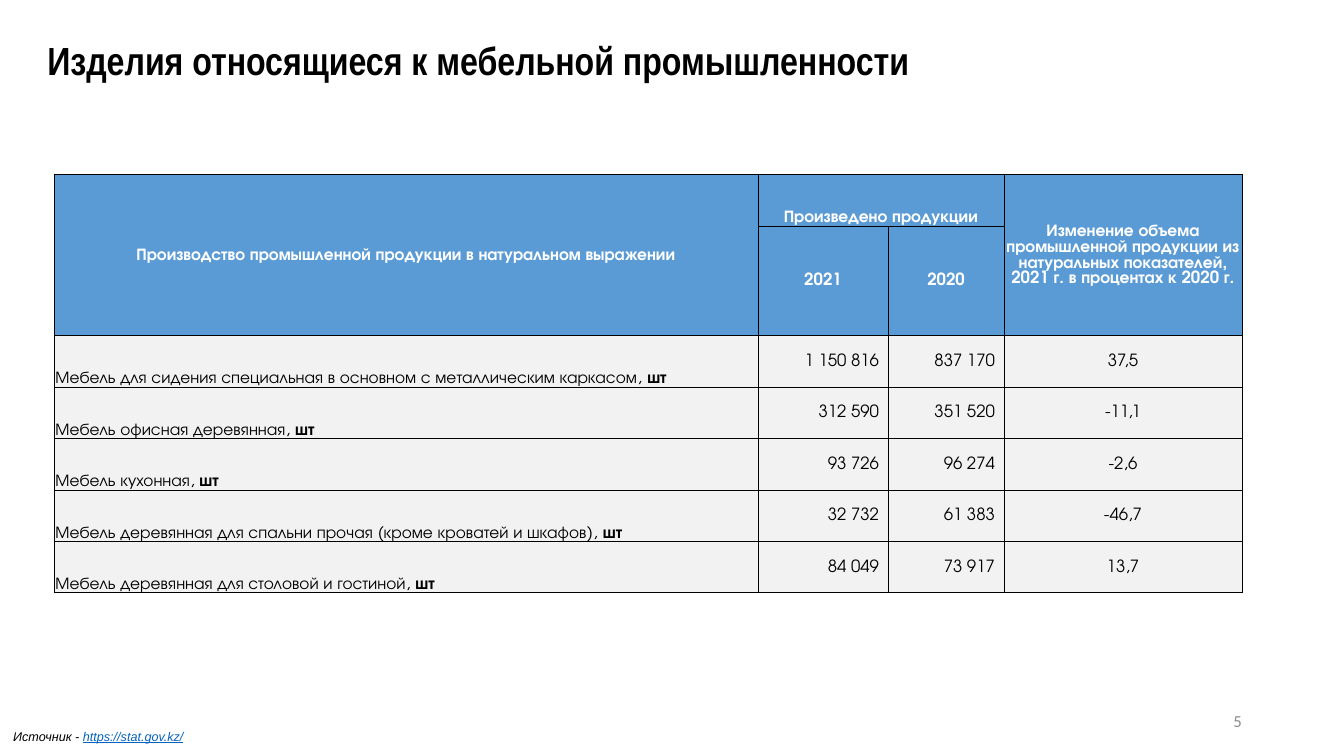
import pptx
import pptx.util
import pptx.dml.color
import pptx.enum.text
from lxml import etree
from pptx.oxml.ns import qn

Pt = pptx.util.Pt
Align = pptx.enum.text.PP_ALIGN
Anchor = pptx.enum.text.MSO_ANCHOR

BLACK, WHITE, GREY = "000000", "FFFFFF", "8C8C8C"
HEAD, BODY, LINK = "5B9BD5", "F2F2F2", "0563C1"
FACE = "TeX Gyre Adventor"

WIDTHS = (502.5, 93, 82.8, 170)
ROW, TALL = 36.72, 78.5
GOODS = (
    ("Мебель для сидения специальная в основном с металлическим каркасом, ",
     "1 150 816", "837 170", "37,5"),
    ("Мебель офисная деревянная, ", "312 590", "351 520", "-11,1"),
    ("Мебель кухонная, ", "93 726", "96 274", "-2,6"),
    ("Мебель деревянная для спальни прочая (кроме кроватей и шкафов), ",
     "32 732", "61 383", "-46,7"),
    ("Мебель деревянная для столовой и гостиной, ", "84 049", "73 917", "13,7"),
)
# Row, column, rows spanned, columns spanned, anchor, text
HEADS = (
    (0, 0, 2, 1, Anchor.MIDDLE,
     "Производство промышленной продукции в натуральном выражении"),
    (0, 1, 1, 2, Anchor.BOTTOM, "Произведено продукции"),
    (0, 3, 2, 1, Anchor.MIDDLE,
     "Изменение объема промышленной продукции из натуральных показателей, "
     "2021 г. в процентах к 2020 г."),
    (1, 1, 1, 1, Anchor.MIDDLE, "2021"),
    (1, 2, 1, 1, Anchor.MIDDLE, "2020"),
)


def paint(color):
    return pptx.dml.color.RGBColor.from_string(color)


class Page:
    def __init__(self, deck):
        self.slide = deck.slides.add_slide(deck.slide_layouts[5])

    def run(self, para, text, size, face, color=BLACK, **marks):
        """Add a run; marks are font switches such as bold or italic."""
        run = para.add_run()
        run.text = text
        font = run.font
        font.size, font.name = Pt(size), face
        font.color.rgb = paint(color)
        for mark, value in marks.items():
            setattr(font, mark, value)

    def title(self, text, left, top, width, height):
        box = self.slide.shapes.title
        box.left, box.top = Pt(left), Pt(top)
        box.width, box.height = Pt(width), Pt(height)
        box.text_frame.vertical_anchor = Anchor.MIDDLE
        para = box.text_frame.paragraphs[0]
        para.alignment, para.line_spacing = Align.LEFT, 0.9
        self.run(para, text, 28, "Arial Narrow", bold=True)

    def text(self, left, top, width, height, align, anchor, inset):
        """Add a text box and give back its first paragraph."""
        box = self.slide.shapes.add_textbox(
            Pt(left), Pt(top), Pt(width), Pt(height))
        frame = box.text_frame
        frame.word_wrap, frame.vertical_anchor = True, anchor
        frame.margin_left = frame.margin_right = Pt(inset)
        frame.margin_top = frame.margin_bottom = Pt(0)
        para = frame.paragraphs[0]
        para.alignment = align
        return para

    def table(self, left, top, widths, heights):
        grid = self.slide.shapes.add_table(
            len(heights), len(widths), Pt(left), Pt(top),
            Pt(sum(widths)), Pt(sum(heights))).table
        grid.first_row = grid.horz_banding = False
        for col, width in zip(grid.columns, widths):
            col.width = Pt(width)
        for row, height in zip(grid.rows, heights):
            row.height = Pt(height)
        for cell in grid.iter_cells():
            self.edge(cell)
        return grid

    def edge(self, cell):
        """Draw a thin black line on all four sides of a cell."""
        props = cell._tc.get_or_add_tcPr()
        for side in ("a:lnL", "a:lnR", "a:lnT", "a:lnB"):
            line = etree.SubElement(props, qn(side), w=str(int(Pt(0.5))))
            fill = etree.SubElement(line, qn("a:solidFill"))
            etree.SubElement(fill, qn("a:srgbClr"), val=BLACK)

    def cell(self, cell, fill, align, anchor, right=0.72):
        """Format a cell and give back its paragraph."""
        cell.fill.solid()
        cell.fill.fore_color.rgb = paint(fill)
        cell.vertical_anchor = anchor
        cell.margin_left = cell.margin_top = Pt(0.72)
        cell.margin_right, cell.margin_bottom = Pt(right), Pt(0)
        para = cell.text_frame.paragraphs[0]
        para.alignment = align
        return para


def main():
    deck = pptx.Presentation()
    deck.slide_width, deck.slide_height = Pt(960), Pt(540)
    page = Page(deck)

    page.title("Изделия относящиеся к мебельной промышленности",
               26.6, 9.4, 648.7, 71.3)

    grid = page.table(38.9, 124.6, WIDTHS, [ROW, TALL] + [ROW] * len(GOODS))
    for row, col, down, across, anchor, text in HEADS:
        cell = grid.cell(row, col)
        if down * across > 1:
            cell.merge(grid.cell(row + down - 1, col + across - 1))
        para = page.cell(cell, HEAD, Align.CENTER, anchor)
        page.run(para, text, 12, FACE, WHITE, bold=True)

    for row, (name, *made, change) in enumerate(GOODS, 2):
        para = page.cell(grid.cell(row, 0), BODY, Align.LEFT, Anchor.BOTTOM)
        page.run(para, name, 12, FACE, bold=False)
        page.run(para, "шт", 12, FACE, bold=True)
        for col, count in enumerate(made, 1):
            para = page.cell(grid.cell(row, col), BODY, Align.RIGHT,
                             Anchor.MIDDLE, 6.5)
            page.run(para, count, 12, FACE, bold=False)
        para = page.cell(grid.cell(row, 3), BODY, Align.CENTER, Anchor.MIDDLE)
        page.run(para, change, 12, FACE, bold=False)

    para = page.text(678.2, 500.4, 216, 28.8, Align.RIGHT, Anchor.MIDDLE, 7.2)
    page.run(para, "5", 12, "Calibri", GREY)

    para = page.text(9.4, 520.6, 860, 12.2, Align.LEFT, Anchor.TOP, 0)
    page.run(para, "Источник - ", 9, "Arial", italic=True)
    page.run(para, "https://stat.gov.kz/", 9, "Arial", LINK,
             italic=True, underline=True)

    deck.save("out.pptx")


if __name__ == "__main__":
    main()
